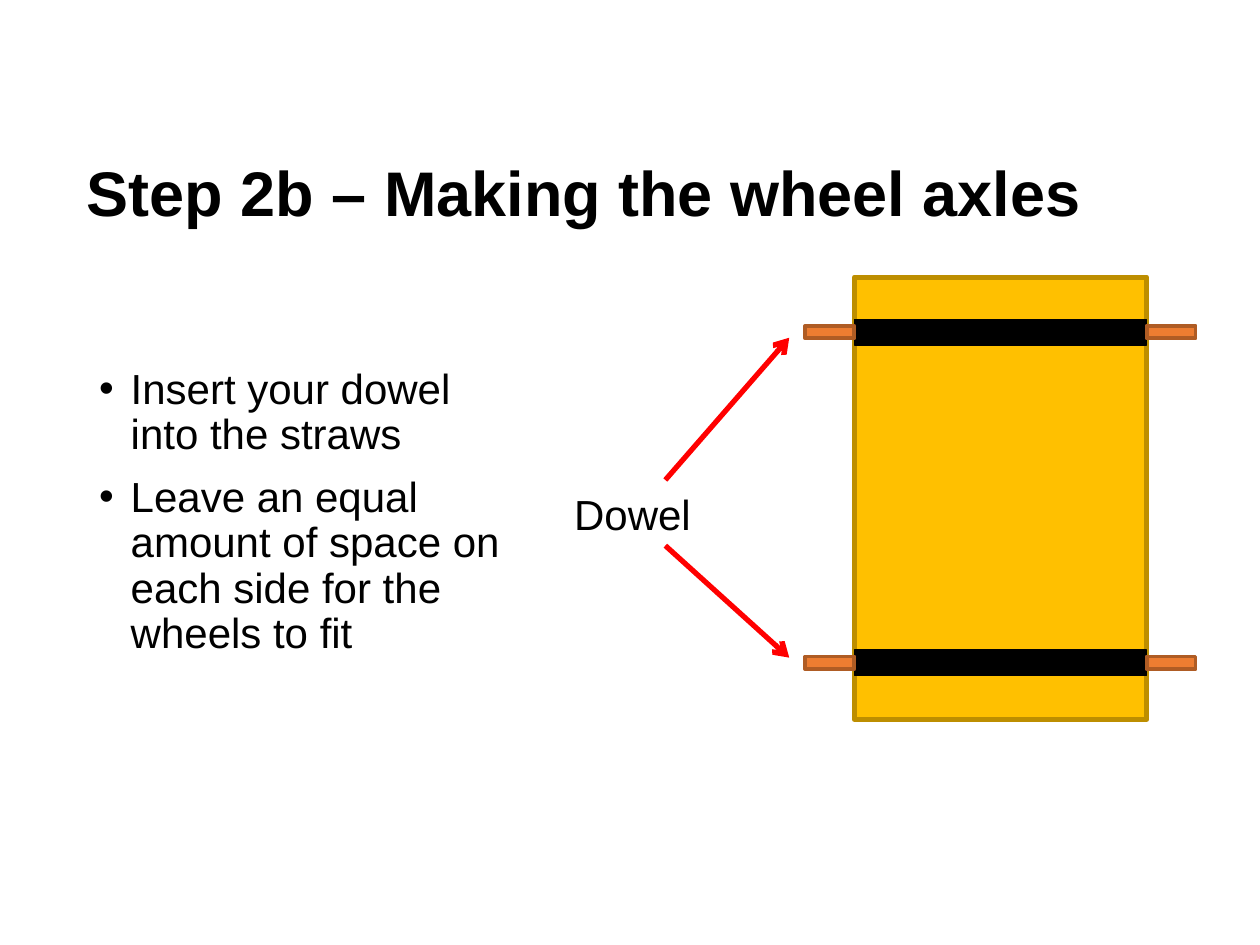
from dataclasses import dataclass

from lxml import etree
from pptx import Presentation
from pptx.dml.color import RGBColor
from pptx.enum import shapes, text
from pptx.oxml import ns
from pptx.util import Pt


@dataclass(frozen=True)
class Theme:
    font: str = "Arial"
    title_size: int = 36
    body_size: int = 24
    ink: str = "000000"
    card: str = "FFC000"
    card_edge: str = "BD8E00"
    dowel: str = "ED7D31"
    dowel_edge: str = "AF5C24"
    arrow: str = "FF0000"


theme = Theme()


def style(paragraph, size, bold=False):
    font = paragraph.font
    font.name, font.size, font.bold = theme.font, Pt(size), bold
    font.color.rgb = RGBColor.from_string(theme.ink)


def add_bar(left, top, width, height, fill, edge, weight):
    bar = slide.shapes.add_shape(
        shapes.MSO_SHAPE.RECTANGLE, Pt(left), Pt(top), Pt(width), Pt(height))
    bar.shadow.inherit = False
    bar.fill.solid()
    bar.fill.fore_color.rgb = RGBColor.from_string(fill)
    bar.line.color.rgb = RGBColor.from_string(edge)
    bar.line.width = Pt(weight)


deck = Presentation()
deck.slide_width, deck.slide_height = Pt(720), Pt(540)
slide = deck.slides.add_slide(deck.slide_layouts[1])

# Title
title = slide.shapes.title
title.left, title.top, title.width, title.height = Pt(42.5), Pt(81.4), Pt(628), Pt(61.2)
heading = title.text_frame
heading.text = "Step 2b – Making the wheel axles"
heading.auto_size = text.MSO_AUTO_SIZE.NONE
heading.vertical_anchor = text.MSO_ANCHOR.MIDDLE
heading.paragraphs[0].alignment = text.PP_ALIGN.LEFT
heading.paragraphs[0].line_spacing = 0.9
style(heading.paragraphs[0], theme.title_size, bold=True)

# Instructions
instructions = slide.placeholders[1]
instructions.left, instructions.top = Pt(49.5), Pt(206.6)
instructions.width, instructions.height = Pt(253.5), Pt(224)
steps = instructions.text_frame
steps.text = ("Insert your dowel into the straws\n"
              "Leave an equal amount of space on each side for the wheels to fit")
steps.auto_size = text.MSO_AUTO_SIZE.NONE
for number, step in enumerate(steps.paragraphs):
    step.line_spacing = 0.9
    step.space_before = Pt(10 if number else 0)
    properties = step._p.get_or_add_pPr()
    properties.set("marL", str(Pt(18)))
    properties.set("indent", str(Pt(-18)))
    etree.SubElement(properties, ns.qn("a:buFont"), typeface=theme.font)
    etree.SubElement(properties, ns.qn("a:buChar"), char="•")
    style(step, theme.body_size)

# Card base with a straw across each axle
card_left, card_width = 488.2, 167
axle_centers = (189.8, 378.8)
add_bar(card_left, 158.4, card_width, 252.7, theme.card, theme.card_edge, 3)
straw_height = 14.4
for center in axle_centers:
    add_bar(card_left, center - straw_height / 2, card_width, straw_height,
            theme.ink, theme.ink, 1)

# Dowel label
label = slide.shapes.add_textbox(Pt(320.4), Pt(275.8), Pt(82), Pt(36))
label.text_frame.word_wrap = True
label.text_frame.auto_size = text.MSO_AUTO_SIZE.SHAPE_TO_FIT_TEXT
dowel_name = label.text_frame.paragraphs[0]
dowel_name.text = "Dowel"
dowel_name.alignment = text.PP_ALIGN.CENTER
style(dowel_name, theme.body_size)

# Arrows from the label to the dowels
for start_y, end_y in ((274.3, 193), (311.8, 375.8)):
    arrow = slide.shapes.add_connector(
        shapes.MSO_CONNECTOR.STRAIGHT, Pt(380.2), Pt(start_y), Pt(451), Pt(end_y))
    arrow.line.color.rgb = RGBColor.from_string(theme.arrow)
    arrow.line.width = Pt(3)
    etree.SubElement(arrow.line._get_or_add_ln(), ns.qn("a:tailEnd"), type="arrow")
    etree.SubElement(arrow._element.spPr, ns.qn("a:effectLst"))

# Dowel ends on both sides of the card
dowel_width, dowel_height = 28, 7.2
for center in axle_centers:
    for left in (card_left - dowel_width, card_left + card_width):
        add_bar(left, center - dowel_height / 2, dowel_width, dowel_height,
                theme.dowel, theme.dowel_edge, 2.25)

deck.save("out.pptx")
